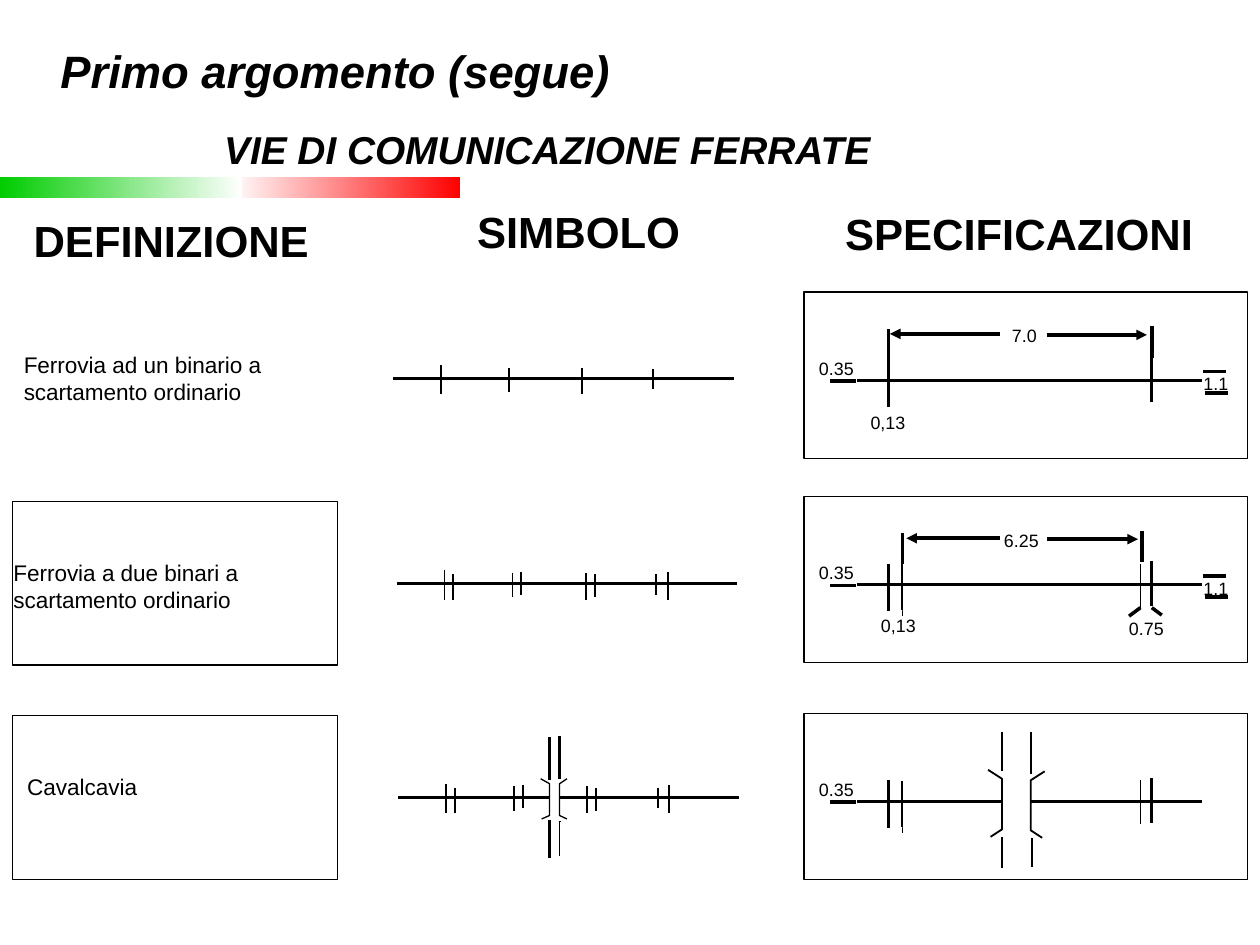
import dataclasses

import pptx
import pptx.dml.color
import pptx.enum.shapes
import pptx.enum.text
import pptx.oxml.ns
import pptx.util
from lxml import etree

BLACK, WHITE = "000000", "FFFFFF"
HAIRLINE, THIN, THICK = 0, 1.05, 1.6
ROWS = 3
RECTANGLE = pptx.enum.shapes.MSO_SHAPE.RECTANGLE
STRAIGHT = pptx.enum.shapes.MSO_CONNECTOR.STRAIGHT


@dataclasses.dataclass
class Box:
    """Area in cm; every part is placed relative to its top left corner."""
    left: float
    top: float
    width: float
    height: float

    def inner(self, x, y, width, height):
        return Box(self.left + x, self.top + y, width, height)

    def point(self, x, y):
        return pptx.util.Cm(self.left + x), pptx.util.Cm(self.top + y)

    def frame(self):
        return [pptx.util.Cm(v) for v in (self.left, self.top, self.width, self.height)]


def rgb(value):
    return pptx.dml.color.RGBColor.from_string(value)


def set_line(shape, color, width):
    shape.line.color.rgb = rgb(color)
    shape.line.width = pptx.util.Pt(width)


def add_panel(shapes, box, border, width=HAIRLINE):
    panel = shapes.add_shape(RECTANGLE, *box.frame())
    panel.shadow.inherit = False
    panel.fill.solid()
    panel.fill.fore_color.rgb = rgb(WHITE)
    set_line(panel, border, width)


def add_stroke(shapes, box, start, end, width=HAIRLINE, arrow=False):
    stroke = shapes.add_connector(STRAIGHT, *box.point(*start), *box.point(*end))
    set_line(stroke, BLACK, width)
    if arrow:
        line = stroke.line._get_or_add_ln()
        etree.SubElement(line, pptx.oxml.ns.qn("a:tailEnd"), type="triangle")
    etree.SubElement(stroke._element.spPr, pptx.oxml.ns.qn("a:effectLst"))


def add_outline(shapes, box, points, width=HAIRLINE):
    start, *rest = [box.point(*p) for p in points]
    builder = shapes.build_freeform(*start, scale=1.0)
    builder.add_line_segments(rest, close=False)
    outline = builder.convert_to_shape()
    outline.shadow.inherit = False
    outline.fill.background()
    set_line(outline, BLACK, width)


def add_text(shapes, box, lines, size, bold=False, italic=False, middle=True):
    label = shapes.add_textbox(*box.frame())
    frame = label.text_frame
    frame.word_wrap = not middle
    frame.auto_size = pptx.enum.text.MSO_AUTO_SIZE.SHAPE_TO_FIT_TEXT
    anchors = pptx.enum.text.MSO_ANCHOR
    frame.vertical_anchor = anchors.MIDDLE if middle else anchors.TOP
    paragraph = frame.paragraphs[0]
    for number, line in enumerate(lines):
        if number:
            paragraph.add_line_break()
        run = paragraph.add_run()
        run.text = line
        run.font.name = "Arial"
        run.font.size = pptx.util.Pt(size)
        run.font.bold, run.font.italic = bold, italic
        run.font.color.rgb = rgb(BLACK)


def add_flag(shapes, box):
    """Green to white, then white to red."""
    halves = [(4.65, 4.62, WHITE, "FF0000"), (0, 4.88, "00CC00", WHITE)]
    for x, width, first, last in halves:
        band = shapes.add_shape(RECTANGLE, *box.inner(x, 0, width, box.height).frame())
        band.shadow.inherit = False
        band.line.fill.background()
        band.fill.gradient()
        band.fill.gradient_angle = 0
        for stop, color in zip(band.fill.gradient_stops, (first, last)):
            stop.color.rgb = rgb(color)


def add_headings(shapes, box):
    add_text(shapes, box.inner(0.97, 0.74, 13.87, 1.37), ["Primo argomento (segue)"],
             25.9, bold=True, italic=True, middle=False)
    add_text(shapes, box.inner(4.27, 2.41, 13.69, 1.19), ["VIE DI COMUNICAZIONE FERRATE"],
             22.2, bold=True, italic=True)
    columns = [("DEFINIZIONE", 0.43, 4.19, 6.12), ("SIMBOLO", 9.37, 3.99, 4.65),
               ("SPECIFICAZIONI", 16.79, 4.04, 7.62)]
    for title, x, y, width in columns:
        add_text(shapes, box.inner(x, y, width, 1.32), [title], 24.9, bold=True)


def add_definition(shapes, box, border, lines, x, y, width, height):
    add_panel(shapes, box, border)
    add_text(shapes, box.inner(x, y, width, height), lines, 12.9)


def add_overpass(shapes, box, gap, gap_border, outlines, stubs, width):
    """Bridge over the track: blank gap, flared parapets and road edges."""
    add_panel(shapes, box.inner(*gap), WHITE, gap_border)
    for points in outlines:
        add_outline(shapes, box, points, width)
    for x, start, end in stubs:
        add_stroke(shapes, box, (x, start), (x, end), width)


def add_symbol(shapes, box, double, overpass):
    add_panel(shapes, box, WHITE)
    add_stroke(shapes, box, (0.46, 1.69), (7.32, 1.69), THICK)
    ticks = [(1.42, 1.42, 2.01), (2.79, 1.47, 1.96), (4.27, 1.47, 2.01), (5.69, 1.5, 1.91)]
    if double:
        ticks += [(1.6, 1.5, 2.01), (2.97, 1.45, 1.91), (4.45, 1.5, 1.96), (5.92, 1.45, 2.01)]
    for x, top, bottom in ticks:
        add_stroke(shapes, box, (x, top), (x, bottom), THIN)
    if overpass:
        add_overpass(
            shapes, box, (3.53, 1.6, 0.15, 0.23), THICK,
            [[(3.33, 1.32), (3.51, 1.42), (3.51, 2.06), (3.35, 2.13)],
             [(3.86, 1.32), (3.71, 1.42), (3.71, 2.06), (3.86, 2.13)],
             [(3.73, 2.18), (3.71, 2.18), (3.71, 2.87)]],
            [(3.51, 2.16, 2.92), (3.71, 1.32, 0.46), (3.51, 1.35, 0.48)], HAIRLINE)


def add_dimensions(shapes, box, sides, tips, labels):
    """Span arrows, extension lines and the tick height on the right."""
    for y, x in ((1.6, 8.05), (2.03, 8.08)):
        add_stroke(shapes, box, (x, y), (x + 0.46, y))
    for x, bottom, top in zip(sides, (1.37, 1.32), (0.74, 0.69)):
        add_stroke(shapes, box, (x, bottom), (x, top))
    for x, tip, y in zip((3.94, 4.9), tips, (0.84, 0.86)):
        add_stroke(shapes, box, (x, y), (tip, y), arrow=True)
    for text, x, y, width in [*labels, ("1.1", 7.8, 1.5, 1.02)]:
        add_text(shapes, box.inner(x, y, width, 0.69), [text], 10.2)


def add_specification(shapes, box, double, overpass, dimensions):
    add_panel(shapes, box, BLACK)
    # Track, main ticks and line weight
    add_stroke(shapes, box, (1.07, 1.78), (8.03, 1.78), THICK)
    add_stroke(shapes, box, (1.7, 1.35), (1.7, 2.31), THICK)
    add_stroke(shapes, box, (7.01, 1.3), (7.01, 2.21), THICK)
    add_stroke(shapes, box, (1.04, 1.79), (0.53, 1.79))
    add_text(shapes, box.inner(0.05, 1.19, 1.22, 0.69), ["0.35"], 10.2)
    if dimensions:
        add_dimensions(shapes, box, *dimensions)
    if double:
        add_stroke(shapes, box, (1.98, 2.29), (1.98, 1.37), THIN)
        add_stroke(shapes, box, (6.78, 2.24), (6.78, 1.35), THIN)
        add_outline(shapes, box, [(1.98, 2.31), (1.99, 2.31), (1.99, 2.41)])
    if double and dimensions:
        add_stroke(shapes, box, (6.78, 2.24), (6.55, 2.41))
        add_stroke(shapes, box, (7.01, 2.24), (7.21, 2.39))
    if overpass:
        add_overpass(
            shapes, box, (4.01, 1.47, 0.53, 0.61), HAIRLINE,
            [[(3.71, 1.14), (3.99, 1.32), (3.99, 2.34), (3.76, 2.49)],
             [(4.85, 1.17), (4.57, 1.35), (4.57, 2.36), (4.8, 2.51)]],
            [(3.99, 1.17, 0.38), (4.57, 1.22, 0.38), (3.99, 2.49, 3.12), (4.6, 2.51, 3.1)],
            THIN)


def main():
    deck = pptx.Presentation()
    deck.slide_width, deck.slide_height = pptx.util.Cm(25.4), pptx.util.Cm(19.05)
    shapes = deck.slides.add_slide(deck.slide_layouts[6]).shapes

    add_flag(shapes, Box(0, 3.56, 9.27, 0.43))
    add_headings(shapes, Box(0, 0, 25.4, 5.5))

    definitions = [
        (Box(0.46, 5.94, 6.45, 3.4), WHITE,
         ["Ferrovia ad un binario a ", "scartamento ordinario"], -0.23, 0.99, 5.54, 1.37),
        (Box(0.25, 10.11, 6.55, 3.3), BLACK,
         ["Ferrovia a due binari a ", "scartamento ordinario"], -0.23, 1.02, 5.28, 1.37),
        (Box(0.25, 14.43, 6.55, 3.3), BLACK, ["Cavalcavia"], 0.05, 1.02, 2.77, 0.81)]
    symbol_corners = [(7.47, 5.94), (7.54, 10.08), (7.57, 14.38)]
    specification_tops = [5.89, 10.01, 14.38]
    dimensions = [
        ((1.7, 7.01), (1.73, 6.91), [("7.0", 3.94, 0.53, 1.02), ("0,13", 1.09, 2.29, 1.22)]),
        ((1.98, 6.81), (2.06, 6.73), [("6.25", 3.78, 0.53, 1.22), ("0,13", 1.3, 2.26, 1.22),
                                      ("0.75", 6.3, 2.31, 1.22)]),
        None]
    for row in range(ROWS):
        double, overpass = row > 0, row == ROWS - 1
        add_definition(shapes, *definitions[row])
        add_symbol(shapes, Box(*symbol_corners[row], 8.13, 3.35), double, overpass)
        add_specification(shapes, Box(16.21, specification_tops[row], 8.94, 3.35),
                          double, overpass, dimensions[row])
    deck.save("out.pptx")


if __name__ == "__main__":
    main()
